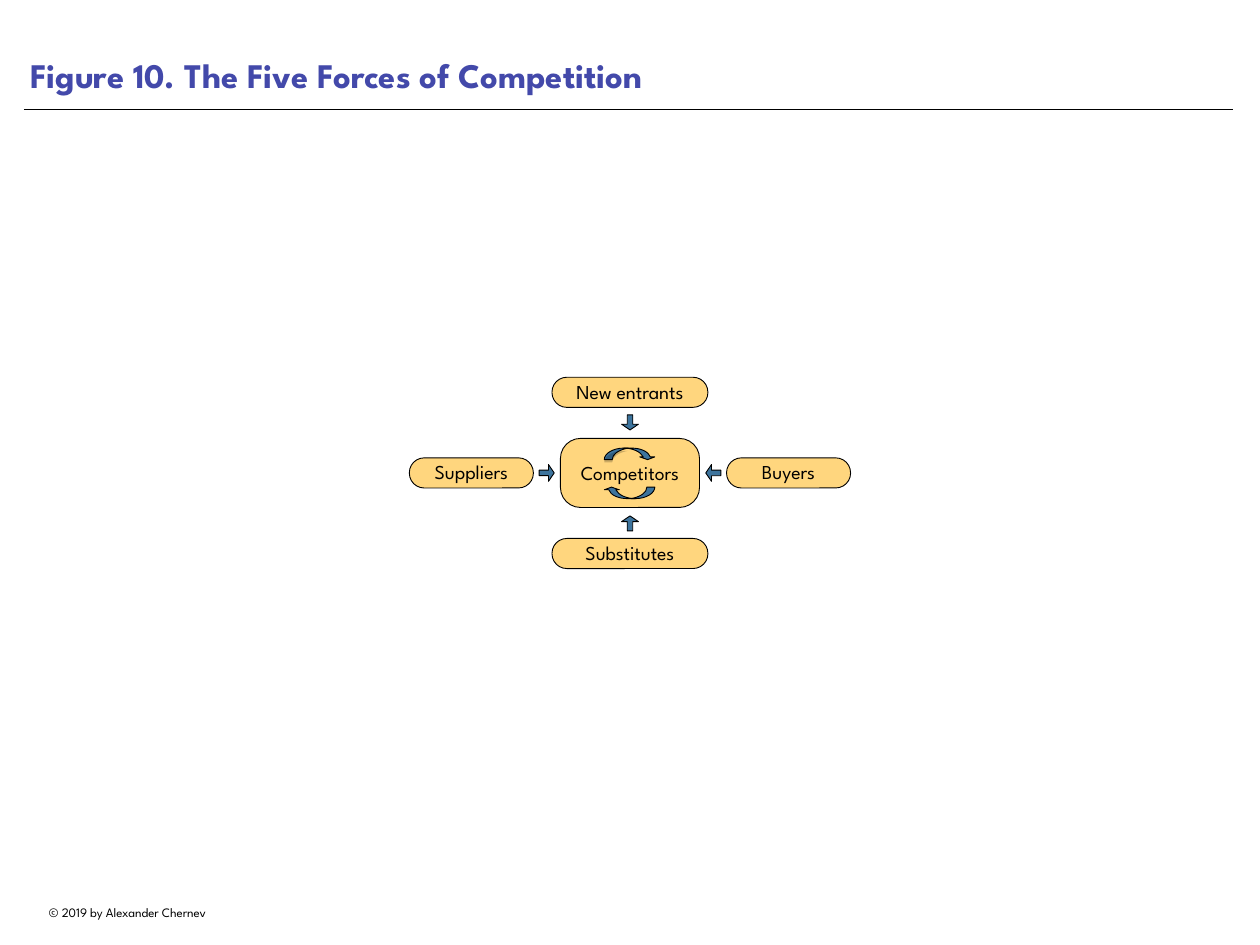
from lxml import etree
from pptx import Presentation
from pptx.dml.color import RGBColor
from pptx.enum.shapes import MSO_CONNECTOR, MSO_SHAPE
from pptx.enum.text import MSO_ANCHOR, MSO_AUTO_SIZE, PP_ALIGN
from pptx.oxml.ns import qn
from pptx.util import Inches, Pt

FONT = "League Spartan"
BLACK, TITLE_BLUE, ARROW_BLUE, AMBER = "000000", "4349AA", "3D749D", "FFD67E"
CENTER_X, CENTER_Y = 7.11, 5.34

# Curved arrow: each part is one line point or the three points of a Bezier curve
ARROW_HEAD = [
    [(7.31, 5.19)], [(7.22, 5.16)], [(7.26, 5.16)],
    [(7.23, 5.10), (7.14, 5.06), (7.04, 5.06)], [(7.13, 5.06)],
    [(7.23, 5.06), (7.32, 5.10), (7.34, 5.16)], [(7.39, 5.16)],
]
ARROW_TAIL = [
    [(7.09, 5.06)], [(6.98, 5.08), (6.91, 5.13), (6.91, 5.19)], [(6.82, 5.19)],
    [(6.82, 5.12), (6.92, 5.06), (7.04, 5.06)],
    [(7.06, 5.06), (7.07, 5.06), (7.09, 5.06)],
]


def color(hex_code):
    return RGBColor.from_string(hex_code)


def paint(shape, fill, line=BLACK):
    shape.shadow.inherit = False
    shape.fill.solid()
    shape.fill.fore_color.rgb = color(fill)
    if line:
        shape.line.color.rgb = color(line)
        shape.line.width = Pt(0.75)
    else:
        shape.line.fill.background()


def write(frame, text, size, hex_code=BLACK, bold=False,
          align=PP_ALIGN.CENTER, spacing=1.0):
    para = frame.paragraphs[0]
    para.alignment = align
    para.line_spacing = spacing
    span = para.add_run()
    span.text = text
    span.font.name = FONT
    span.font.size = Pt(size)
    span.font.bold = bold
    span.font.color.rgb = color(hex_code)


def set_margins(frame, inset):
    frame.margin_left = frame.margin_right = Inches(inset)
    frame.margin_top = frame.margin_bottom = Inches(inset)


def add_title(page, text):
    title = page.shapes.title
    title.left, title.top = Inches(0.27), Inches(0)
    title.width, title.height = Inches(13.64), Inches(1.15)
    frame = title.text_frame
    frame.vertical_anchor = MSO_ANCHOR.BOTTOM
    set_margins(frame, 0.07)
    write(frame, text, 28, TITLE_BLUE, bold=True, align=PP_ALIGN.LEFT)


def add_rule(page):
    rule = page.shapes.add_connector(
        MSO_CONNECTOR.STRAIGHT, Inches(0.27), Inches(1.24), Inches(13.92), Inches(1.24))
    rule.line.color.rgb = color(BLACK)
    rule.line.width = Pt(0.5)
    etree.SubElement(rule._element.spPr, qn("a:effectLst"))


def add_footer(page, text):
    box = page.shapes.add_textbox(Inches(0.27), Inches(10.16), Inches(2.34), Inches(0.28))
    box.text_frame.word_wrap = False
    box.text_frame.auto_size = MSO_AUTO_SIZE.SHAPE_TO_FIT_TEXT
    write(box.text_frame, text, 10.5)


def add_force(page, text, center_x, center_y, width, height=0.34, corner=0.492,
              anchor=MSO_ANCHOR.BOTTOM, inset=0, spacing=0.8):
    box = page.shapes.add_shape(
        MSO_SHAPE.ROUNDED_RECTANGLE, Inches(center_x - width / 2),
        Inches(center_y - height / 2), Inches(width), Inches(height))
    box.adjustments[0] = corner
    paint(box, AMBER)
    frame = box.text_frame
    frame.word_wrap = True
    frame.vertical_anchor = anchor
    set_margins(frame, inset)
    write(frame, text, 16, spacing=spacing)


def add_block_arrow(page, center_x, center_y, rotation):
    width, height = 0.17, 0.19
    arrow = page.shapes.add_shape(
        MSO_SHAPE.RIGHT_ARROW, Inches(center_x - width / 2),
        Inches(center_y - height / 2), Inches(width), Inches(height))
    arrow.adjustments[0], arrow.adjustments[1] = 0.329, 0.38
    arrow.rotation = rotation
    paint(arrow, ARROW_BLUE)


def bend_curves(shape, outlines):
    """Join the three line steps of each Bezier part into one curve."""
    steps = iter(list(shape._element.spPr.iter(qn("a:lnTo"))))
    for outline in outlines:
        for part in outline[1:]:
            lines = [next(steps) for _ in part]
            if len(lines) == 3:
                curve = etree.Element(qn("a:cubicBezTo"))
                lines[0].addprevious(curve)
                for line in lines:
                    curve.append(line[0])
                    line.getparent().remove(line)


def add_outline(page, outlines, drop=0):
    contours = [[(Inches(x), Inches(y + drop)) for part in outline for x, y in part]
                for outline in outlines]
    builder = page.shapes.build_freeform(*contours[0][0], scale=1.0)
    builder.add_line_segments(contours[0][1:], close=True)
    for contour in contours[1:]:
        builder.move_to(*contour[0])
        builder.add_line_segments(contour[1:], close=True)
    shape = builder.convert_to_shape()
    bend_curves(shape, outlines)
    return shape


def add_rivalry_cycle(page):
    outlines = [ARROW_HEAD, ARROW_TAIL]
    paint(add_outline(page, outlines), ARROW_BLUE)

    # Soft shade below the upper tail
    shade = add_outline(page, [ARROW_TAIL], drop=0.03)
    paint(shade, BLACK, line=None)
    tint = shade._element.spPr.find(qn("a:solidFill"))[0]
    etree.SubElement(tint, qn("a:alpha"), val="20000")

    # Lower arrow is the upper one turned by half
    lower = add_outline(page, outlines, drop=0.44)
    lower.rotation = 180
    paint(lower, ARROW_BLUE)


def main():
    deck = Presentation()
    deck.slide_width, deck.slide_height = Inches(14.22), Inches(10.67)
    page = deck.slides.add_slide(deck.slide_layouts[5])

    # Frame of the page
    add_footer(page, "© 2019 by Alexander Chernev")
    add_rule(page)
    add_title(page, "Figure 10. The Five Forces of Competition")

    # Competitors in the centre
    add_force(page, "Competitors", CENTER_X, CENTER_Y, 1.57, 0.78, corner=0.291,
              anchor=MSO_ANCHOR.MIDDLE, inset=0.04, spacing=1.0)
    add_rivalry_cycle(page)

    # Four outer forces, each with an arrow pointing inwards
    forces = [
        ("New entrants", 0, -1, 90), ("Substitutes", 0, 1, 270),
        ("Suppliers", -1, 0, 0), ("Buyers", 1, 0, 180),
    ]
    for text, side_x, side_y, rotation in forces:
        add_block_arrow(page, CENTER_X + 0.94 * side_x,
                        CENTER_Y + 0.57 * side_y, rotation)
        add_force(page, text, CENTER_X + 1.79 * side_x, CENTER_Y + 0.91 * side_y,
                  1.4 if side_x else 1.76)

    deck.save("out.pptx")


if __name__ == "__main__":
    main()
